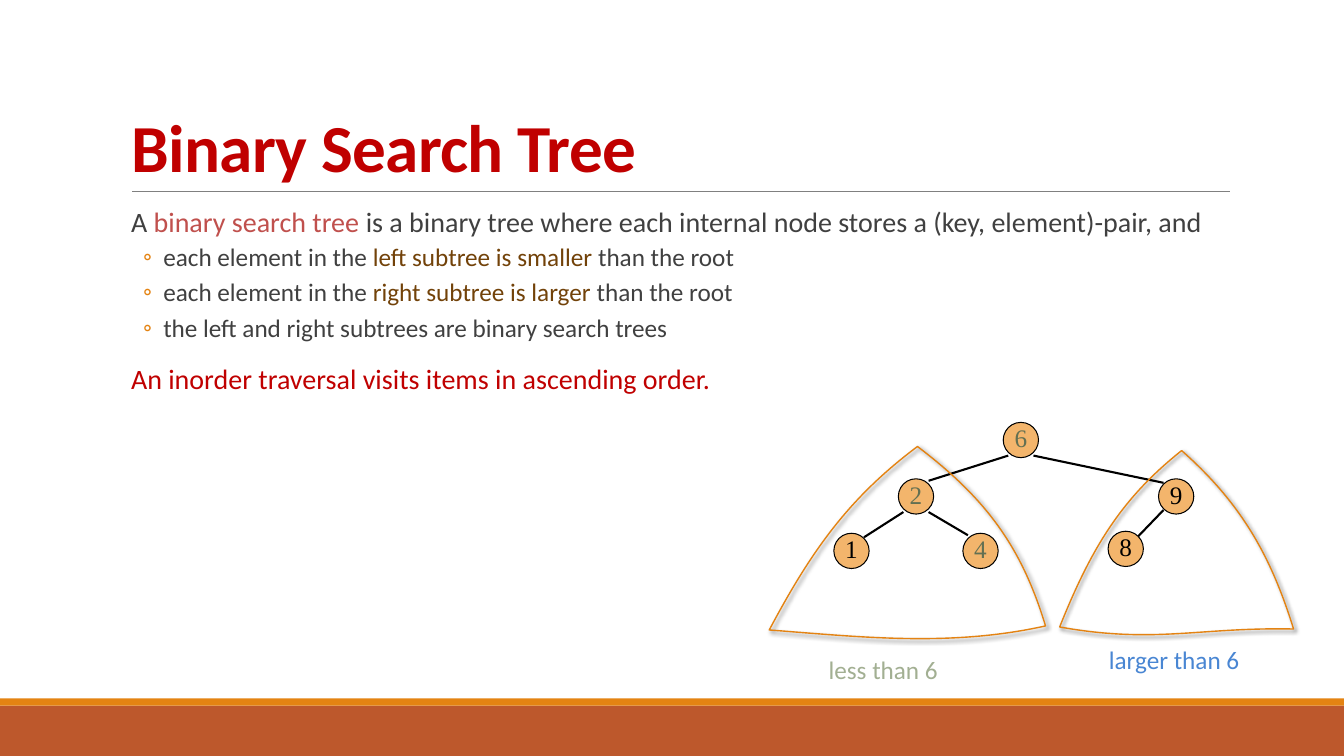
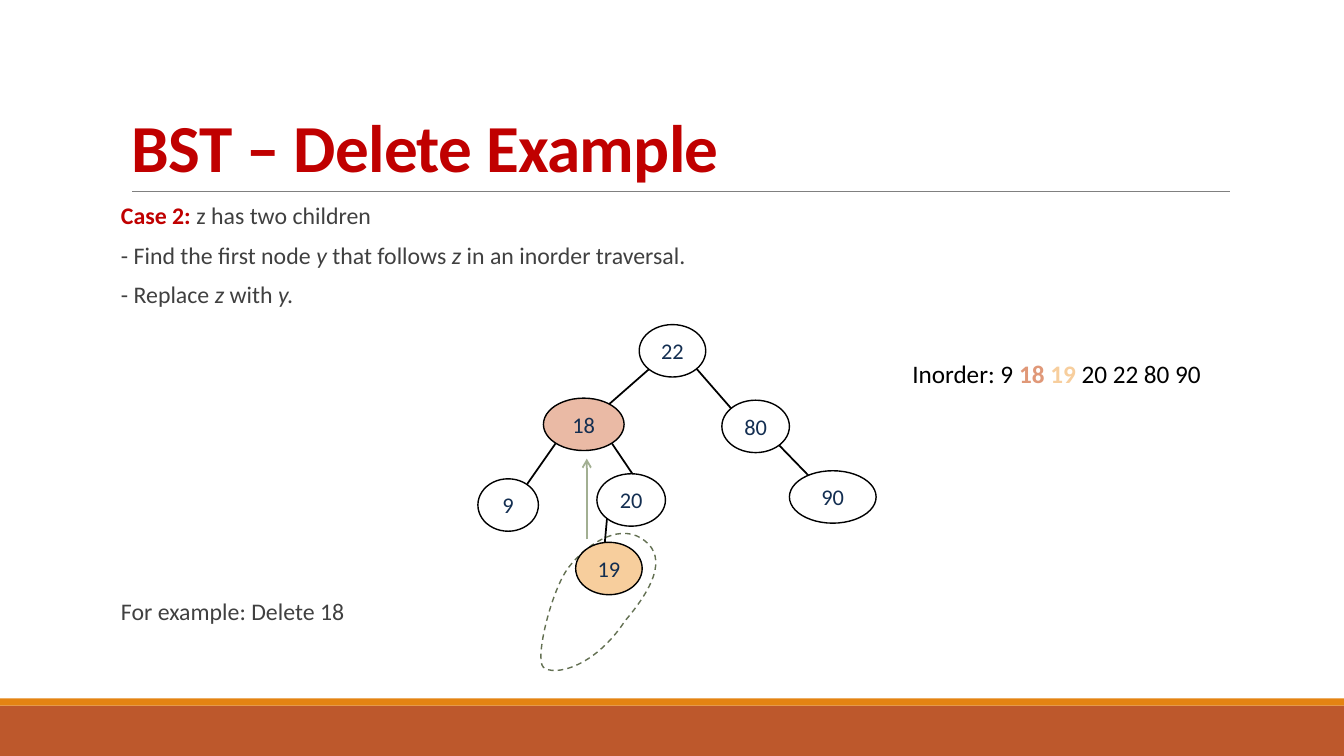
from collections import namedtuple
from dataclasses import dataclass

from lxml import etree
from pptx import Presentation
from pptx.dml.color import RGBColor
from pptx.enum.dml import MSO_LINE
from pptx.enum.shapes import MSO_CONNECTOR, MSO_SHAPE
from pptx.enum.text import MSO_ANCHOR, PP_ALIGN
from pptx.oxml.ns import qn
from pptx.util import Inches, Pt

RECTANGLE, OVAL = MSO_SHAPE.RECTANGLE, MSO_SHAPE.OVAL
STRAIGHT = MSO_CONNECTOR.STRAIGHT
TOP, MIDDLE, BOTTOM = MSO_ANCHOR.TOP, MSO_ANCHOR.MIDDLE, MSO_ANCHOR.BOTTOM
LEFT, CENTER = PP_ALIGN.LEFT, PP_ALIGN.CENTER
DASH = MSO_LINE.DASH

Box = namedtuple("Box", "left top width height")


@dataclass(frozen=True)
class Theme:
    font: str = "Calibri"
    digit_font: str = "Times New Roman"
    title_size: int = 48
    lead_size: int = 20
    text_size: int = 18
    case_size: int = 17
    node_size: int = 16
    red: str = "C00000"
    ink: str = "404040"
    black: str = "000000"
    white: str = "FFFFFF"
    rule: str = "808080"
    band: str = "BD582C"
    orange: str = "E48312"
    term: str = "C0504D"
    brown: str = "724209"
    node: str = "F3B56C"
    olive: str = "637052"
    sage: str = "A2AF92"
    blue: str = "4986D3"
    navy: str = "132E51"
    removed: str = "EABAA5"
    removed_text: str = "E09878"
    successor: str = "F7CE9D"


THEME = Theme()


def rgb(color):
    return RGBColor.from_string(color)


def write_text(frame, paragraphs, *, size=THEME.text_size, color=THEME.ink, font=THEME.font,
               bold=False, tracking=None, align=LEFT, anchor=TOP, wrap=True,
               insets=(0.1, 0.05, 0.1, 0.05), line_spacing=1.0, before=0, after=0):
    """Fill a frame; each paragraph is a list of strings or (string, overrides) pairs."""
    frame.word_wrap, frame.vertical_anchor = wrap, anchor
    (frame.margin_left, frame.margin_top,
     frame.margin_right, frame.margin_bottom) = map(Inches, insets)
    for index, spans in enumerate(paragraphs):
        para = frame.add_paragraph() if index else frame.paragraphs[0]
        para.alignment, para.line_spacing = align, line_spacing
        para.space_before, para.space_after = Pt(before), Pt(after)
        for part in spans:
            text, style = part if isinstance(part, tuple) else (part, {})
            span = para.add_run()
            span.text = text
            span.font.name = font
            span.font.size = Pt(style.get("size", size))
            span.font.bold = style.get("bold", bold)
            span.font.italic = style.get("italic", False)
            span.font.color.rgb = rgb(style.get("color", color))
            if tracking is not None:
                span.font._element.set("spc", str(round(tracking * 100)))


def add_text(page, box, paragraphs, **style):
    frame = page.shapes.add_textbox(*map(Inches, box)).text_frame
    write_text(frame, paragraphs, **style)
    return frame


def indent(para, margin, hanging=0, bullet=None):
    properties = para._p.get_or_add_pPr()
    properties.set("marL", str(Inches(margin)))
    properties.set("indent", str(Inches(-hanging)))
    if bullet:
        color = etree.SubElement(properties, qn("a:buClr"))
        etree.SubElement(color, qn("a:srgbClr"), val=THEME.orange)
        etree.SubElement(properties, qn("a:buFont"), typeface=THEME.font)
        etree.SubElement(properties, qn("a:buChar"), char=bullet)


def add_shape(page, kind, box, fill, outline=None, weight=1):
    shape = page.shapes.add_shape(kind, *map(Inches, box))
    shape.shadow.inherit = False
    shape.fill.solid()
    shape.fill.fore_color.rgb = rgb(fill)
    if outline:
        shape.line.color.rgb = rgb(outline)
        shape.line.width = Pt(weight)
    else:
        shape.line.fill.background()
    return shape


def add_line(page, start, end, color=THEME.black, weight=1.5, arrow=False):
    line = page.shapes.add_connector(STRAIGHT, *map(Inches, (*start, *end)))
    line.line.color.rgb = rgb(color)
    line.line.width = Pt(weight)
    properties = line._element.spPr
    if arrow:
        etree.SubElement(properties.find(qn("a:ln")), qn("a:tailEnd"), type="arrow")
    etree.SubElement(properties, qn("a:effectLst"))


def curve_bounds(start, curves, steps=40):
    """Return the box that encloses a chain of cubic curves."""
    points = [start]
    for first, second, end in curves:
        for step in range(1, steps + 1):
            t = step / steps
            weights = ((1 - t) ** 3, 3 * t * (1 - t) ** 2, 3 * t * t * (1 - t), t ** 3)
            corners = (start, first, second, end)
            points.append(tuple(sum(w * corner[axis] for w, corner in zip(weights, corners))
                                for axis in (0, 1)))
        start = end
    across, down = zip(*points)
    return Box(min(across), min(down), max(across) - min(across), max(down) - min(down))


def add_outline(page, box, start, curves, color, dash=None, shadow=False):
    """Draw a closed curved outline whose points are relative to the box."""
    builder = page.shapes.build_freeform(*map(Inches, start))
    builder.add_line_segments([tuple(map(Inches, curve[-1])) for curve in curves], close=True)
    outline = builder.convert_to_shape()
    bounds = curve_bounds(start, curves)
    outline.left, outline.top = Inches(box.left + bounds.left), Inches(box.top + bounds.top)
    outline.width, outline.height = Inches(bounds.width), Inches(bounds.height)

    route = outline._element.spPr.find(".//" + qn("a:path"))
    route.set("w", str(outline.width))
    route.set("h", str(outline.height))
    for child in list(route):
        route.remove(child)
    for command, points in [("a:moveTo", [start]), *(("a:cubicBezTo", curve) for curve in curves)]:
        segment = etree.SubElement(route, qn(command))
        for x, y in points:
            etree.SubElement(segment, qn("a:pt"), x=str(Inches(x - bounds.left)),
                             y=str(Inches(y - bounds.top)))
    etree.SubElement(route, qn("a:close"))

    outline.shadow.inherit = False
    outline.fill.background()
    outline.line.color.rgb = rgb(color)
    outline.line.width = Pt(1)
    if dash:
        outline.line.dash_style = dash
    if shadow:
        effects = outline._element.spPr.find(qn("a:effectLst"))
        cast = etree.SubElement(effects, qn("a:outerShdw"), blurRad=str(Pt(3)), dist=str(Pt(2)),
                                dir=str(45 * 60000), rotWithShape="0")
        tone = etree.SubElement(cast, qn("a:srgbClr"), val=THEME.black)
        etree.SubElement(tone, qn("a:alpha"), val="60000")


def add_edges(page, box, edges, weight):
    for x1, y1, x2, y2 in edges:
        add_line(page, (box.left + x1, box.top + y1), (box.left + x2, box.top + y2), weight=weight)


def add_node(page, box, label, fill, weight, **style):
    node = add_shape(page, OVAL, box, fill, THEME.black, weight)
    write_text(node.text_frame, [[label]], align=CENTER, anchor=MIDDLE, wrap=False, **style)


def add_page(deck, title):
    """Add a slide with the shared bands, title and title rule."""
    page = deck.slides.add_slide(deck.slide_layouts[6])
    add_shape(page, RECTANGLE, Box(0, 7, 13.33, 0.5), THEME.band)
    add_shape(page, RECTANGLE, Box(0, 6.93, 13.33, 0.07), THEME.orange)
    add_line(page, (1.31, 1.9), (12.2, 1.9), THEME.rule, 0.5)
    add_text(page, Box(1.21, 0.31, 11, 1.59), [[title]], size=THEME.title_size, color=THEME.red,
             bold=True, tracking=-0.5, anchor=BOTTOM, line_spacing=0.85)
    return page


def add_definition(page, box):
    lead = {"size": THEME.lead_size}
    brown = {"color": THEME.brown}
    frame = add_text(page, box, [
        [("A ", lead), ("binary search tree ", {**lead, "color": THEME.term}),
         ("is a binary tree where each internal node stores a (key, element)-pair, and", lead)],
        ["each element in the ", ("left subtree is smaller ", brown), "than the root"],
        ["each element in the ", ("right subtree is larger ", brown), "than the root"],
        ["the left and right subtrees are binary search trees"],
        [("An inorder traversal visits items in ascending order.", {**lead, "color": THEME.red})],
    ], insets=(0, 0.05, 0, 0.05), line_spacing=0.9, before=2, after=4)
    first, *bullets, last = frame.paragraphs
    for para in (first, last):
        indent(para, 0.1)
        para.space_before, para.space_after = Pt(12), Pt(2)
    for para in bullets:
        indent(para, 0.42, 0.2, "◦")


def add_subtree_diagram(page, box):
    add_edges(page, box, [
        (2.4, 0.32, 1.61, 0.57), (3.94, 0.59, 2.65, 0.32), (3.69, 1.12, 3.94, 0.86),
        (0.97, 1.13, 1.36, 0.88), (2, 1.11, 1.61, 0.88),
    ], weight=1.5)
    for label, x, y, color in [
        ("6", 2.35, -0.01, THEME.olive), ("9", 3.89, 0.55, THEME.black),
        ("2", 1.31, 0.55, THEME.olive), ("4", 1.95, 1.09, THEME.olive),
        ("1", 0.67, 1.09, THEME.black), ("8", 3.39, 1.07, THEME.black),
    ]:
        add_node(page, Box(box.left + x, box.top + y, 0.35, 0.35), label, THEME.node, 0.75,
                 color=color, font=THEME.digit_font, insets=(0, 0, 0, 0.05))
    for start, curves in [
        ((0.03, 2.05), [((0.45, 1.26), (0.82, 0.74), (1.5, 0.23)),
                        ((2.2, 0.76), (2.54, 1.25), (2.77, 2.01)),
                        ((1.83, 2.22), (0.94, 2.12), (0.03, 2.05))]),
        ((2.91, 2.02), [((3.23, 1.22), (3.53, 0.74), (4.12, 0.27)),
                        ((4.72, 0.8), (5.01, 1.33), (5.23, 2.04)),
                        ((4.29, 2.02), (3.86, 2.19), (2.91, 2.02))]),
    ]:
        add_outline(page, box, start, curves, THEME.orange, shadow=True)
    for label, x, y, width, color in [("less than 6", 0.52, 2.24, 1.46, THEME.sage),
                                      ("larger than 6", 3.3, 2.14, 1.76, THEME.blue)]:
        add_text(page, Box(box.left + x, box.top + y, width, 0.4), [[label]], color=color)


def add_case(page, box):
    """Write the steps at the top of the box and the example near its foot."""
    italic = {"italic": True}
    frame = add_text(page, box, [
        [("Case 2: ", {"color": THEME.red, "bold": True}), "z has two children"],
        ["- Find the first node ", ("y", italic), " that follows ", ("z", italic),
         " in an inorder traversal."],
        ["- Replace ", ("z ", italic), "with", (" y.", italic)],
        ["For example: Delete 18"],
    ], size=THEME.case_size, insets=(0, 0.05, 0, 0.05), line_spacing=0.7, before=12, after=2)
    frame.paragraphs[-1].space_before = Pt(210)


def add_delete_diagram(page, box):
    add_edges(page, box, [
        (1.74, 0.46, 1.33, 0.82), (2.21, 0.46, 2.55, 0.85), (3.03, 1.22, 3.35, 1.55),
        (0.81, 1.2, 0.53, 1.6), (1.37, 1.2, 1.64, 1.6), (1.32, 1.95, 1.29, 2.28),
    ], weight=1.25)
    add_outline(page, box, (0.94, 2.43), [
        ((1.1, 2.22), (1.42, 1.99), (1.66, 2.14)), ((1.9, 2.29), (1.84, 2.56), (1.5, 2.96)),
        ((1.19, 3.43), (0.79, 3.51), (0.69, 3.42)), ((0.6, 3.34), (0.77, 2.65), (0.94, 2.43)),
    ], THEME.olive, dash=DASH)
    for label, x, y, width, fill in [
        ("22", 1.64, 0.02, 0.66, THEME.white), ("80", 2.46, 0.77, 0.67, THEME.white),
        ("18", 0.69, 0.75, 0.8, THEME.removed), ("9", 0.04, 1.55, 0.6, THEME.white),
        ("90", 3.13, 1.47, 0.86, THEME.white), ("20", 1.22, 1.5, 0.68, THEME.white),
        ("19", 1.01, 2.18, 0.66, THEME.successor),
    ]:
        add_node(page, Box(box.left + x, box.top + y, width, 0.52), label, fill, 1,
                 size=THEME.node_size, color=THEME.navy)
    arrow_x = box.left + 1.12
    add_line(page, (arrow_x, box.top + 2.15), (arrow_x, box.top + 1.35), THEME.sage, 1.25,
             arrow=True)


def add_inorder(page, box):
    add_text(page, box, [[
        "Inorder: 9 ", ("18 ", {"color": THEME.removed_text, "bold": True}),
        ("19 ", {"color": THEME.successor, "bold": True}), "20 22 80 90",
    ]], color=THEME.black)


def main():
    deck = Presentation()
    deck.slide_width, deck.slide_height = Inches(13.33), Inches(7.5)
    body = Box(1.2, 2.02, 11, 4.4)

    page = add_page(deck, "Binary Search Tree")
    add_definition(page, body)
    add_subtree_diagram(page, Box(7.6, 4.2, 5.3, 2.7))

    page = add_page(deck, "BST – Delete Example")
    add_case(page, body)
    add_delete_diagram(page, Box(4.7, 3.2, 4, 3.5))
    add_inorder(page, Box(8.95, 3.51, 3.63, 0.4))

    deck.save("out.pptx")


if __name__ == "__main__":
    main()
